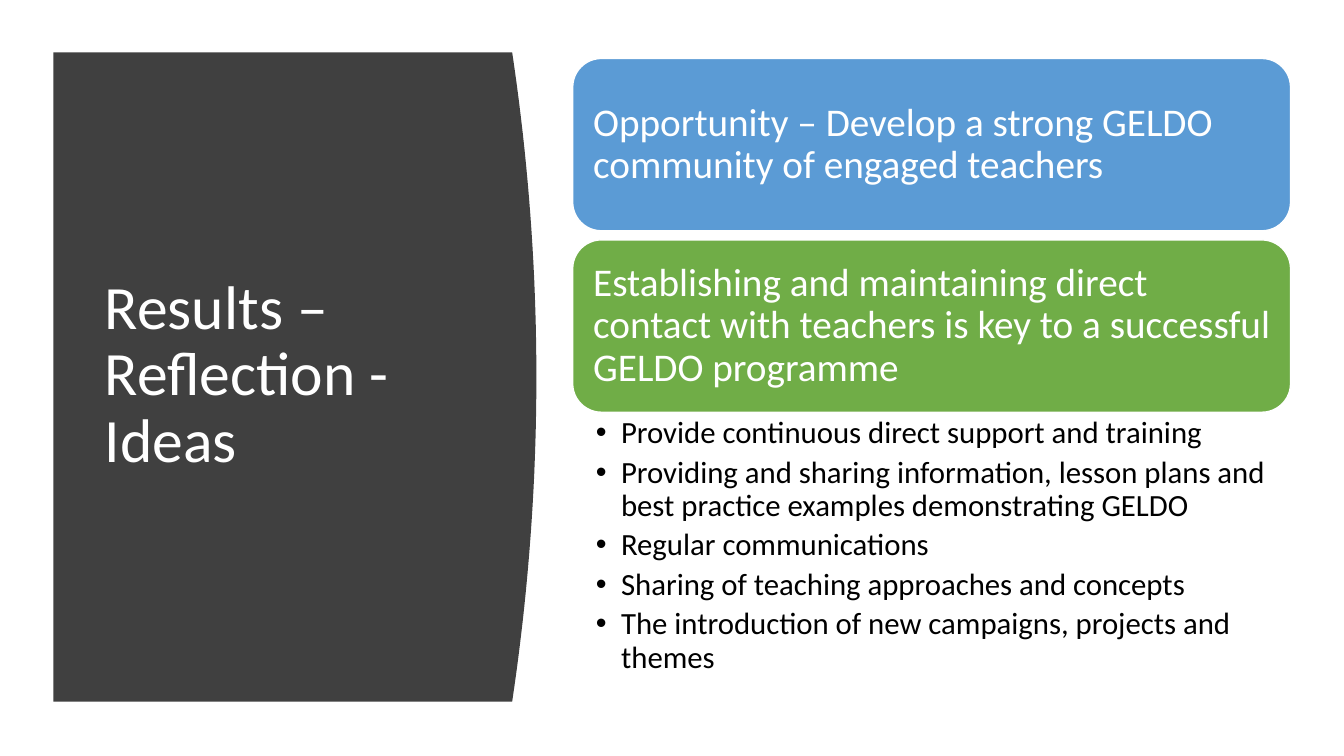
"""Build the GELDO results and reflection slide."""
from pptx import Presentation
from pptx.dml.color import RGBColor
from pptx.enum.shapes import MSO_SHAPE
from pptx.enum.text import MSO_ANCHOR, MSO_AUTO_SIZE, PP_ALIGN
from pptx.util import Inches, Pt

TITLE = "Results – Reflection - Ideas"
CARDS = [
    ("Opportunity – Develop a strong GELDO community of engaged teachers", "blue"),
    ("Establishing and maintaining direct contact with teachers is key to "
     "a successful GELDO programme", "green"),
]
ACTIONS = [
    "Provide continuous direct support and training",
    "Providing and sharing information, lesson plans and best practice "
    "examples demonstrating GELDO",
    "Regular communications",
    "Sharing of teaching approaches and concepts",
    "The introduction of new campaigns, projects and themes",
]
COLORS = {"panel": "404040", "blue": "5B9BD5", "green": "70AD47",
          "white": "FFFFFF", "black": "000000"}
FONT = "Calibri"

PANEL_LEFT, PANEL_TOP, PANEL_HEIGHT = 0.53, 0.52, 6.44
PANEL_EDGE, PANEL_BULGE, CURVE_STEPS = 5.08, 0.24, 40
COLUMN_LEFT, COLUMN_WIDTH = 5.68, 7.12
CARD_TOP, CARD_HEIGHT, CARD_PITCH = 0.58, 1.71, 1.8


def color(name):
    return RGBColor.from_string(COLORS[name])


def place(part, left, top, width, height):
    part.left, part.top = Inches(left), Inches(top)
    part.width, part.height = Inches(width), Inches(height)


def set_frame(frame, anchor, left, top, right, bottom):
    frame.word_wrap = True
    frame.auto_size = MSO_AUTO_SIZE.NONE
    frame.vertical_anchor = anchor
    frame.margin_left, frame.margin_top = Inches(left), Inches(top)
    frame.margin_right, frame.margin_bottom = Inches(right), Inches(bottom)


def write(paragraph, text, size, color_name, after=0):
    paragraph.alignment = PP_ALIGN.LEFT
    paragraph.line_spacing = 0.9
    paragraph.space_before, paragraph.space_after = Pt(0), Pt(after)
    run = paragraph.add_run()
    run.text = text
    run.font.name, run.font.size = FONT, Pt(size)
    run.font.color.rgb = color(color_name)


def add_panel(slide):
    edge = []
    for step in range(CURVE_STEPS + 1):
        share = step / CURVE_STEPS
        bulge = PANEL_BULGE * 4 * share * (1 - share)
        edge.append((Inches(PANEL_EDGE + bulge),
                     Inches(PANEL_TOP + PANEL_HEIGHT * share)))
    builder = slide.shapes.build_freeform(Inches(PANEL_LEFT), Inches(PANEL_TOP))
    builder.add_line_segments(
        edge + [(Inches(PANEL_LEFT), Inches(PANEL_TOP + PANEL_HEIGHT))])
    panel = builder.convert_to_shape()
    panel.shadow.inherit = False
    panel.fill.solid()
    panel.fill.fore_color.rgb = color("panel")
    panel.line.fill.background()
    slide.shapes._spTree.insert(2, panel._element)


def add_card(slide, index, text, fill):
    card = slide.shapes.add_shape(
        MSO_SHAPE.ROUNDED_RECTANGLE, Inches(COLUMN_LEFT),
        Inches(CARD_TOP + index * CARD_PITCH),
        Inches(COLUMN_WIDTH), Inches(CARD_HEIGHT))
    card.shadow.inherit = False
    card.fill.solid()
    card.fill.fore_color.rgb = color(fill)
    card.line.color.rgb, card.line.width = color("white"), Pt(1)
    set_frame(card.text_frame, MSO_ANCHOR.MIDDLE, 0.12, 0.12, 0.12, 0.12)
    write(card.text_frame.paragraphs[0], text, 28, "white")


def add_actions(body):
    place(body, COLUMN_LEFT, 4.1, COLUMN_WIDTH, 2.79)
    frame = body.text_frame
    set_frame(frame, MSO_ANCHOR.TOP, 0.23, 0.04, 0.22, 0.04)
    for index, action in enumerate(ACTIONS):
        paragraph = frame.add_paragraph() if index else frame.paragraphs[0]
        write(paragraph, action, 22, "black", after=4.4)
        properties = paragraph._p.get_or_add_pPr()
        properties.set("marL", str(Inches(0.25)))
        properties.set("indent", str(-Inches(0.25)))


def main():
    deck = Presentation()
    deck.slide_width, deck.slide_height = Inches(13.33), Inches(7.5)
    slide = deck.slides.add_slide(deck.slide_layouts[1])
    title, body = slide.placeholders
    add_panel(slide)
    place(title, 0.94, 1.11, 3.74, 5.24)
    set_frame(title.text_frame, MSO_ANCHOR.MIDDLE, 0.1, 0.05, 0.1, 0.05)
    write(title.text_frame.paragraphs[0], TITLE, 44, "white")
    for index, (text, fill) in enumerate(CARDS):
        add_card(slide, index, text, fill)
    add_actions(body)
    deck.save("out.pptx")


if __name__ == "__main__":
    main()
